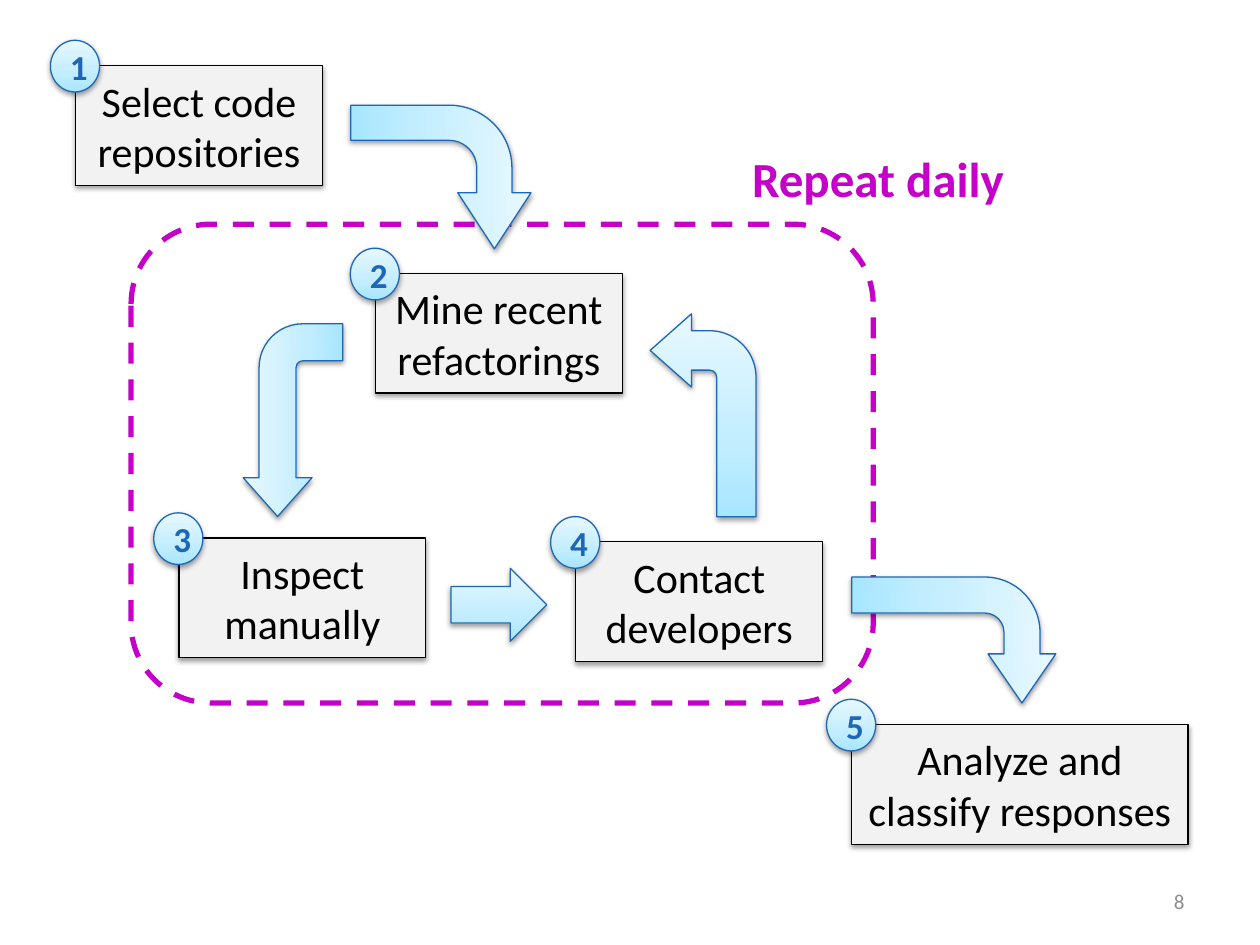
from dataclasses import dataclass
from pptx import Presentation
from pptx.dml.color import RGBColor
from pptx.enum.dml import MSO_LINE
from pptx.enum.shapes import MSO_SHAPE as Preset
from pptx.enum.text import MSO_ANCHOR as Anchor, PP_ALIGN as Align
from pptx.oxml import parse_xml
from pptx.oxml.ns import nsdecls, qn
from pptx.util import Inches, Pt


@dataclass(frozen=True)
class Theme:
    font: str = "Calibri"
    black: str = "000000"
    box: str = "F2F2F2"
    blue: str = "1E67B8"
    purple: str = "C400C9"
    grey: str = "8C8C8C"
    gradient: tuple = ((0, "A7E6FF"), (35, "C1EDFF"), (100, "E7F8FF"))
    number_size: int = 12
    badge_size: int = 20
    step_size: int = 24
    label_size: int = 28


theme = Theme()
presentation = Presentation()
presentation.slide_width, presentation.slide_height = Inches(10), Inches(7.5)
slide = presentation.slides.add_slide(presentation.slide_layouts[6])

# Grid of 100 columns by 75 rows
COLUMN = presentation.slide_width / 100
ROW = presentation.slide_height / 75


def add_raised_shape(parent, preset, left, top, width, height, fill, line):
    """Add a shape with a soft shadow; without a fill colour it gets the gradient."""
    shape = parent.add_shape(preset, int(left * COLUMN), int(top * ROW),
                             int(width * COLUMN), int(height * ROW))
    properties = shape.element.spPr
    if fill:
        shape.fill.solid()
        shape.fill.fore_color.rgb = RGBColor.from_string(fill)
    else:
        shape.fill.background()
        stops = "".join(f'<a:gs pos="{share * 1000}"><a:srgbClr val="{color}"/></a:gs>'
                        for share, color in theme.gradient)
        properties.replace(properties.find(qn("a:noFill")), parse_xml(
            f'<a:gradFill {nsdecls("a")} rotWithShape="1"><a:gsLst>{stops}</a:gsLst>'
            '<a:lin ang="16200000" scaled="0"/></a:gradFill>'))
    shape.line.color.rgb = RGBColor.from_string(line)
    shape.line.width = Pt(0.75)
    shape.shadow.inherit = False
    properties.find(qn("a:effectLst")).append(parse_xml(
        f'<a:outerShdw {nsdecls("a")} blurRad="{Pt(3.1)}" dist="{Pt(1.6)}" dir="5400000" '
        f'rotWithShape="0"><a:srgbClr val="{theme.black}"><a:alpha val="38000"/>'
        '</a:srgbClr></a:outerShdw>'))
    return shape


def write_text(shape, text, size, color, align, bold=False):
    shape.text_frame.word_wrap = True
    paragraph = shape.text_frame.paragraphs[0]
    paragraph.text = text
    paragraph.alignment = align
    paragraph.font.name = theme.font
    paragraph.font.size = Pt(size)
    paragraph.font.bold = bold
    paragraph.font.color.rgb = RGBColor.from_string(color)


# Dashed frame around the daily loop
frame = slide.shapes.add_shape(Preset.FLOWCHART_ALTERNATE_PROCESS, int(10.4 * COLUMN),
                               int(17.8 * ROW), int(58.9 * COLUMN), int(38 * ROW))
frame.fill.background()
frame.line.color.rgb = RGBColor.from_string(theme.purple)
frame.line.width = Pt(3)
frame.line.dash_style = MSO_LINE.DASH
frame.shadow.inherit = False

# Bent arrows: place, rotation, flips, shaft and head widths
bent_arrows = [
    ((15.6, 29.4, 15.3, 7.9), 90, ("flipV",), (0.372, 0.346)),
    ((51.6, 24.9, 8.4, 16.1), 180, ("flipV",), (0.372, 0.346)),
    ((29.3, 6.9, 11.4, 14.3), 270, ("flipH", "flipV"), (0.245, 0.255)),
    ((70.7, 42.7, 10, 16.2), 270, ("flipH", "flipV"), (0.286, 0.269)),
]
for place, rotation, flips, widths in bent_arrows:
    arrow = add_raised_shape(slide.shapes, Preset.BENT_ARROW, *place, None, theme.blue)
    arrow.rotation = rotation
    for flip in flips:
        arrow.element.spPr.find(qn("a:xfrm")).set(flip, "1")
    for index, value in enumerate((*widths, 0.39, 0.438)):
        arrow.adjustments[index] = value

# Steps: a box with a numbered badge on its top left corner
steps = [
    (6, 5.2, 19.6, "Select code repositories"),
    (29.8, 21.7, 19.6, "Mine recent refactorings"),
    (14.2, 42.7, 19.6, "Inspect manually"),
    (45.7, 43, 19.6, "Contact developers"),
    (67.6, 57.5, 26.7, "Analyze and classify responses"),
]
for number, (left, top, width, text) in enumerate(steps, start=1):
    group = slide.shapes.add_group_shape()
    box = add_raised_shape(group.shapes, Preset.RECTANGLE, left, top, width, 9.5,
                           theme.box, theme.black)
    write_text(box, text, theme.step_size, theme.black, Align.CENTER)
    badge = add_raised_shape(group.shapes, Preset.OVAL, left - 2, top - 2, 3.9, 4.1,
                             None, theme.blue)
    write_text(badge, str(number), theme.badge_size, theme.blue, Align.CENTER, bold=True)

# Straight arrow from step 3 to step 4
add_raised_shape(slide.shapes, Preset.RIGHT_ARROW, 35.8, 45.1, 7.6, 5.8, None, theme.blue)

# Loop label and slide number
labels = [
    ((58.7, 11.3, 25.1, 5.7), "Repeat daily", theme.label_size, theme.purple,
     Align.LEFT, True, Anchor.TOP),
    ((71.7, 69.5, 23.3, 4), "8", theme.number_size, theme.grey,
     Align.RIGHT, False, Anchor.MIDDLE),
]
for (left, top, width, height), text, size, color, align, bold, anchor in labels:
    label = slide.shapes.add_textbox(int(left * COLUMN), int(top * ROW),
                                     int(width * COLUMN), int(height * ROW))
    label.text_frame.vertical_anchor = anchor
    write_text(label, text, size, color, align, bold)

presentation.save("out.pptx")
